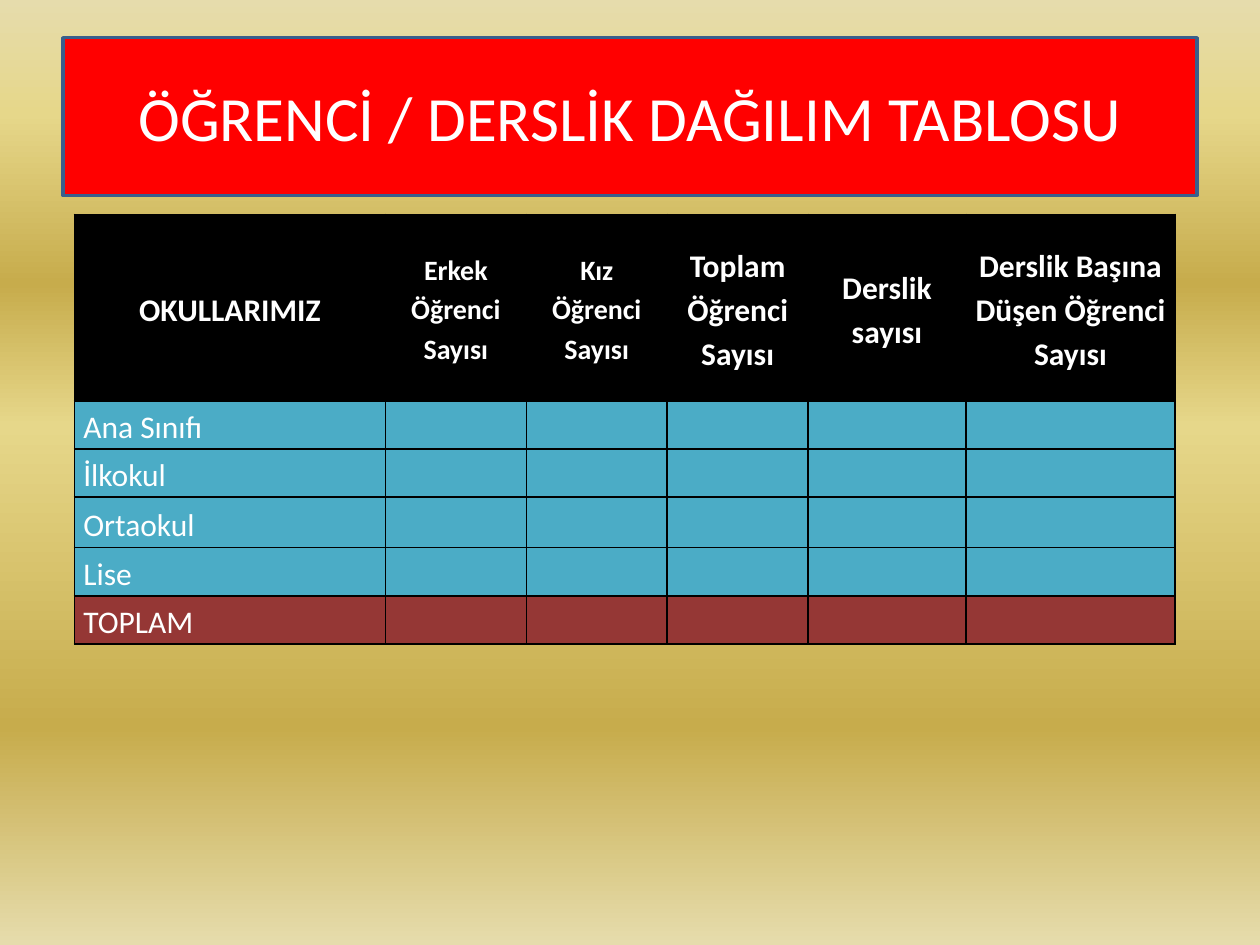
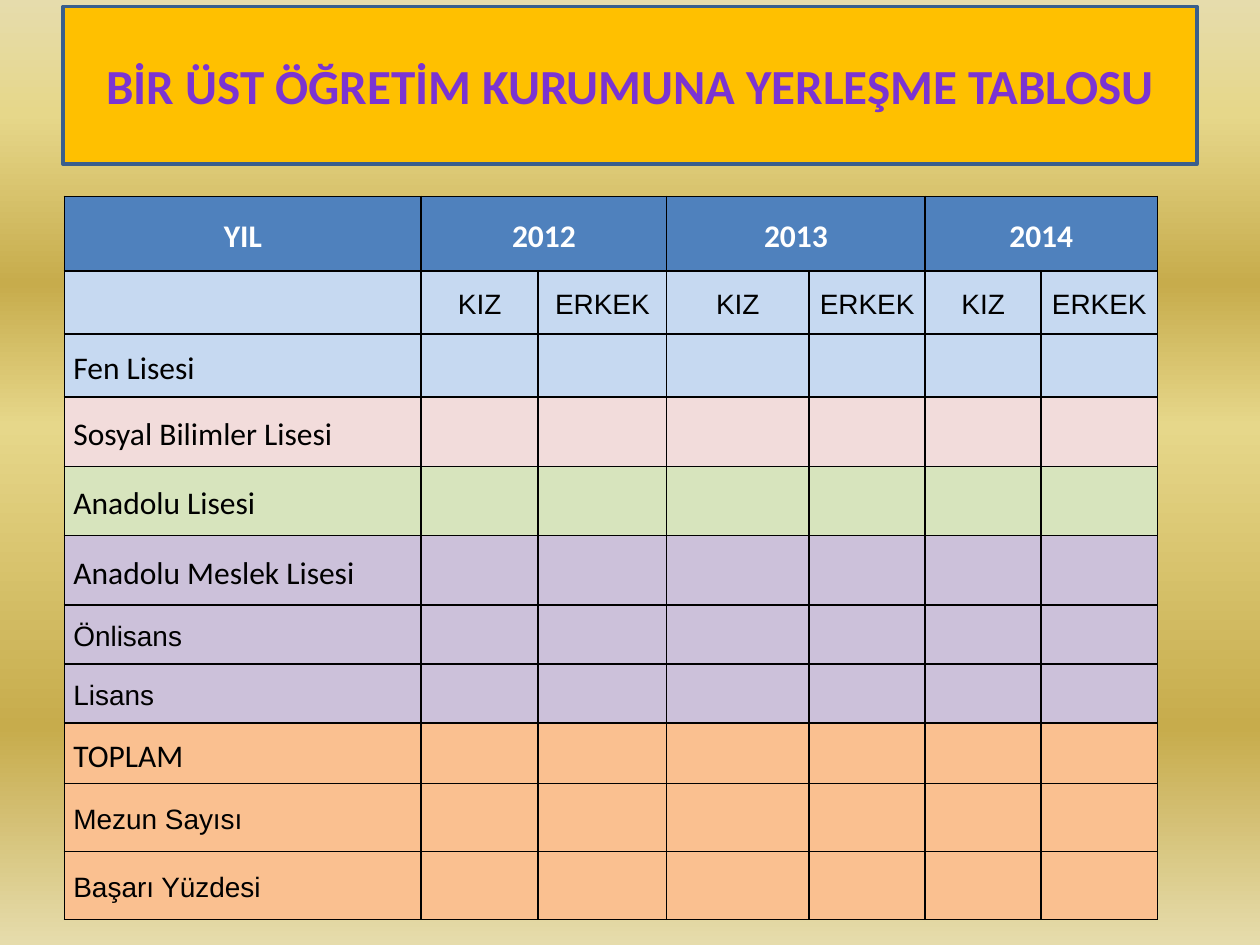
"""Build two school table slides: students per classroom and placement by year."""
from lxml.etree import SubElement
from pptx import Presentation
from pptx.dml.color import RGBColor
from pptx.enum.shapes import MSO_SHAPE
from pptx.enum.text import MSO_ANCHOR, PP_ALIGN
from pptx.oxml.ns import qn
from pptx.util import Cm, Pt

HUES = {
    "sand": "E6DCAC", "straw": "E6D78A", "gold": "C7AC4C",
    "white": "FFFFFF", "black": "000000", "edge": "3A5F8C",
    "red": "FF0000", "amber": "FFC000", "violet": "7B34D2",
    "teal": "4BACC6", "brick": "953735", "blue": "4F81BD",
    "sky": "C6D9F1", "rose": "F2DCDB", "lime": "D7E4BD",
    "lilac": "CCC1DA", "peach": "FAC090",
}
STOPS = [(0, "sand"), (12, "straw"), (30, "gold"),
         (45, "straw"), (77, "gold"), (100, "sand")]

# Text style: font, size, bold, colour
HEAD = ("Calibri", 18, True, "white")
SMALL = ("Calibri", 16, True, "white")
PALE = ("Calibri", 18, False, "white")
DARK = ("Calibri", 18, False, "black")
PLAIN = ("Arial", 16, False, "black")

# Row: height, fill, style of first cell, cell texts
SLIDES = [
    {
        "title": "ÖĞRENCİ / DERSLİK DAĞILIM TABLOSU",
        "style": ("Calibri", 36, False, "white"),
        "band": "red", "top": 0.76,
        "place": (1.5, 4.32),
        "cols": [6.27, 2.84, 2.84, 2.84, 3.18, 4.22],
        "heads": [
            (3.76, "black", [
                ("OKULLARIMIZ", HEAD), ("Erkek Öğrenci Sayısı", SMALL),
                ("Kız Öğrenci Sayısı", SMALL), ("Toplam Öğrenci Sayısı", HEAD),
                ("Derslik sayısı", HEAD),
                ("Derslik Başına Düşen Öğrenci Sayısı", HEAD)]),
        ],
        "rows": [
            (0.97, "teal", "Ana Sınıfı", PALE),
            (0.97, "teal", "İlkokul", PALE),
            (1.02, "teal", "Ortaokul", PALE),
            (0.97, "teal", "Lise", PALE),
            (0.97, "brick", "TOPLAM", PALE),
        ],
        "spans": [],
    },
    {
        "title": "BİR ÜST ÖĞRETİM KURUMUNA YERLEŞME TABLOSU",
        "style": ("Calibri", 28, True, "violet"),
        "band": "amber", "top": 0.13,
        "place": (1.3, 3.96),
        "cols": [7.19, 2.36, 2.59, 2.87, 2.34, 2.34, 2.34],
        "heads": [
            (1.5, "blue", [("YIL", HEAD)] + [
                (text, HEAD) for year in ("2012", "2013", "2014")
                for text in (year, "")]),
            (1.27, "sky", [("", PLAIN)] + [
                ("KIZ", PLAIN), ("ERKEK", PLAIN)] * 3),
        ],
        "rows": [
            (1.27, "sky", "Fen Lisesi", DARK),
            (1.4, "rose", "Sosyal Bilimler Lisesi", DARK),
            (1.4, "lime", "Anadolu Lisesi", DARK),
            (1.4, "lilac", "Anadolu Meslek Lisesi", DARK),
            (1.19, "lilac", "Önlisans", PLAIN),
            (1.19, "lilac", "Lisans", PLAIN),
            (1.22, "peach", "TOPLAM", DARK),
            (1.37, "peach", "Mezun Sayısı", PLAIN),
            (1.37, "peach", "Başarı Yüzdesi", PLAIN),
        ],
        "spans": [1, 3, 5],
    },
]


def hue(name):
    return RGBColor.from_string(HUES[name])


def paint(slide):
    fill = slide.background.fill
    fill.gradient()
    fill.gradient_angle = 270
    stops = slide.background._cSld.find(".//" + qn("a:gsLst"))
    for old in list(stops):
        stops.remove(old)
    for pos, name in STOPS:
        stop = SubElement(stops, qn("a:gs"), pos=str(pos * 1000))
        SubElement(stop, qn("a:srgbClr"), val=HUES[name])


def write(para, text, style, align):
    para.alignment = align
    run = para.add_run()
    run.text = text
    font = run.font
    font.name, size, font.bold, tint = style
    font.size = Pt(size)
    font.color.rgb = hue(tint)


def banner(slide, page):
    box = slide.shapes.add_shape(
        MSO_SHAPE.RECTANGLE, Cm(1.27), Cm(page["top"]), Cm(22.86), Cm(3.18))
    box.shadow.inherit = False
    box.fill.solid()
    box.fill.fore_color.rgb = hue(page["band"])
    box.line.color.rgb = hue("edge")
    box.line.width = Pt(2)
    frame = box.text_frame
    frame.word_wrap = True
    frame.vertical_anchor = MSO_ANCHOR.MIDDLE
    write(frame.paragraphs[0], page["title"], page["style"], PP_ALIGN.CENTER)


def border(cell):
    props = cell._tc.get_or_add_tcPr()
    for side in "LRTB":
        line = SubElement(props, qn("a:ln" + side), w=str(Pt(1)))
        fill = SubElement(line, qn("a:solidFill"))
        SubElement(fill, qn("a:srgbClr"), val=HUES["black"])


def dress(cell, tint, text, style, align):
    border(cell)
    cell.fill.solid()
    cell.fill.fore_color.rgb = hue(tint)
    cell.margin_left = cell.margin_right = Cm(0.18)
    cell.margin_top = cell.margin_bottom = 0
    cell.vertical_anchor = MSO_ANCHOR.MIDDLE
    if text:
        para = cell.text_frame.paragraphs[0]
        para.line_spacing = 1.15
        write(para, text, style, align)


def fill_grid(slide, page):
    cols = page["cols"]
    rows = [(*head, PP_ALIGN.CENTER) for head in page["heads"]]
    for high, tint, label, style in page["rows"]:
        cells = [(label, style)] + [("", style)] * (len(cols) - 1)
        rows.append((high, tint, cells, PP_ALIGN.LEFT))
    left, top = page["place"]
    table = slide.shapes.add_table(
        len(rows), len(cols), Cm(left), Cm(top),
        Cm(sum(cols)), Cm(sum(row[0] for row in rows))).table
    table.first_row = table.horz_banding = False
    for col, wide in zip(table.columns, cols):
        col.width = Cm(wide)
    for r, (high, tint, cells, align) in enumerate(rows):
        table.rows[r].height = Cm(high)
        for c, (text, style) in enumerate(cells):
            dress(table.cell(r, c), tint, text, style, align)
    for c in page["spans"]:
        table.cell(0, c).merge(table.cell(0, c + 1))


def main():
    deck = Presentation()
    deck.slide_width, deck.slide_height = Cm(25.4), Cm(19.05)
    for page in SLIDES:
        slide = deck.slides.add_slide(deck.slide_layouts[6])
        paint(slide)
        banner(slide, page)
        fill_grid(slide, page)
    deck.save("out.pptx")


if __name__ == "__main__":
    main()
